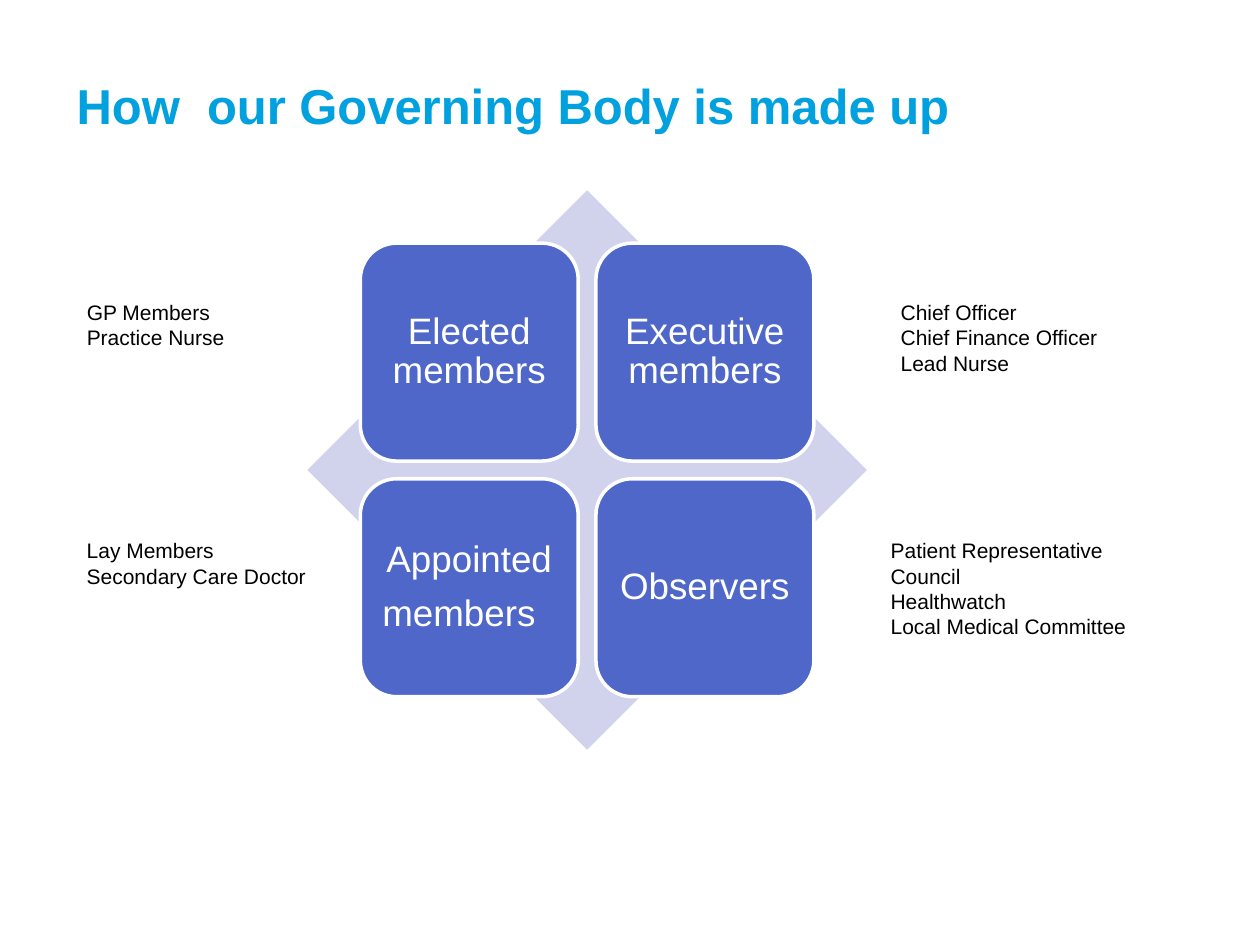
from pptx import Presentation
from pptx.dml.color import RGBColor
from pptx.enum.shapes import MSO_SHAPE
from pptx.enum.text import MSO_ANCHOR, PP_ALIGN
from pptx.util import Inches, Pt

DIAMOND = MSO_SHAPE.DIAMOND
ROUND = MSO_SHAPE.ROUNDED_RECTANGLE
MIDDLE = MSO_ANCHOR.MIDDLE
CENTER = PP_ALIGN.CENTER
rgb = RGBColor.from_string


def write(frame, lines, size, color, bold=False):
    """Put one paragraph per line into the frame."""
    frame.word_wrap = True
    frame.text = "\n".join(lines)
    for para in frame.paragraphs:
        font = para.font
        font.name = "Arial"
        font.size = Pt(size)
        font.bold = bold
        font.color.rgb = rgb(color)


deck = Presentation()
deck.slide_width = Inches(10)
deck.slide_height = Inches(7.5)
shapes = deck.slides.add_slide(deck.slide_layouts[6]).shapes

title = shapes.add_textbox(Inches(0.51), Inches(0.52), Inches(8.24), Inches(0.63))
title.text_frame.vertical_anchor = MIDDLE
write(title.text_frame, ["How  our Governing Body is made up"], 28, "00A1DE", True)

diamond = shapes.add_shape(DIAMOND, Inches(2.44), Inches(1.51), Inches(4.44), Inches(4.44))
diamond.shadow.inherit = False
diamond.fill.solid()
diamond.fill.fore_color.rgb = rgb("D0D3EB")
diamond.line.fill.background()

# Two by two grid of member groups
SIDE, STEP = 1.73, 1.87
groups = [
    ["Elected members"],
    ["Executive members"],
    ["Appointed", "members\t"],
    ["Observers"],
]
for i, lines in enumerate(groups):
    row, col = divmod(i, 2)
    tile = shapes.add_shape(ROUND, Inches(2.86 + col * STEP), Inches(1.93 + row * STEP),
                            Inches(SIDE), Inches(SIDE))
    tile.shadow.inherit = False
    tile.fill.solid()
    tile.fill.fore_color.rgb = rgb("4E67C8")
    tile.line.color.rgb = rgb("FFFFFF")
    tile.line.width = Pt(2)
    frame = tile.text_frame
    frame.vertical_anchor = MIDDLE
    frame.margin_left = frame.margin_right = Inches(0.09)
    frame.margin_top = frame.margin_bottom = Inches(0.09)
    write(frame, lines, 21, "FFFFFF")
    for para in frame.paragraphs:
        para.alignment = CENTER
        para.line_spacing = 0.9
        para.space_after = Pt(8.5)

# Who belongs to each group: left, top, width, height, lines
notes = [
    (0.59, 2.33, 1.42, 0.67, ["GP Members", "Practice Nurse"]),
    (0.59, 4.22, 2.13, 0.67, ["Lay Members", "Secondary Care Doctor"]),
    (7.05, 2.33, 2.2, 0.71, ["Chief Officer", "Chief Finance Officer", "Lead Nurse"]),
    (6.97, 4.22, 2.52, 0.91, ["Patient Representative", "Council", "Healthwatch",
                              "Local Medical Committee"]),
]
for left, top, width, height, lines in notes:
    note = shapes.add_textbox(Inches(left), Inches(top), Inches(width), Inches(height))
    write(note.text_frame, lines, 12, "000000")

deck.save("out.pptx")
